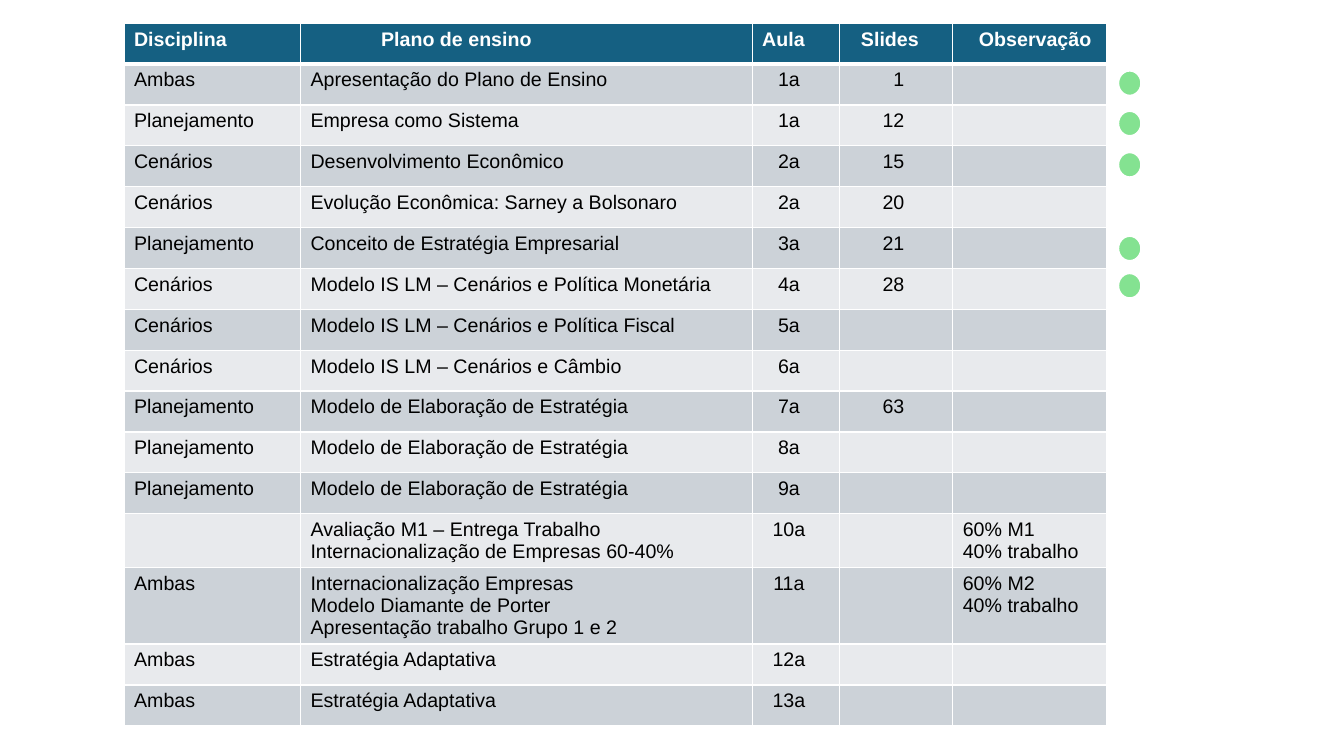
import lxml.etree
import pptx
import pptx.dml.color
import pptx.enum.shapes
import pptx.enum.text
import pptx.oxml.ns
import pptx.util

Inches = pptx.util.Inches
Align = pptx.enum.text.PP_ALIGN

COLORS = {
    "header": "156082",
    "dark_band": "CCD2D8",
    "light_band": "E8EAED",
    "white": "FFFFFF",
    "text": "000000",
    "done": "84E291",
}

HEADERS = ["Disciplina", "Plano de ensino", "Aula", "Slides", "Observação"]
LESSONS = [
    ("Ambas", "Apresentação do Plano de Ensino", "1a", "1", ""),
    ("Planejamento", "Empresa como Sistema", "1a", "12", ""),
    ("Cenários", "Desenvolvimento Econômico", "2a", "15", ""),
    ("Cenários", "Evolução Econômica: Sarney a Bolsonaro", "2a", "20", ""),
    ("Planejamento", "Conceito de Estratégia Empresarial", "3a", "21", ""),
    ("Cenários", "Modelo IS LM – Cenários e Política Monetária", "4a", "28", ""),
    ("Cenários", "Modelo IS LM – Cenários e Política Fiscal", "5a", "", ""),
    ("Cenários", "Modelo IS LM – Cenários e Câmbio", "6a", "", ""),
    ("Planejamento", "Modelo de Elaboração de Estratégia", "7a", "63", ""),
    ("Planejamento", "Modelo de Elaboração de Estratégia", "8a", "", ""),
    ("Planejamento", "Modelo de Elaboração de Estratégia", "9a", "", ""),
    ("", "Avaliação M1 – Entrega Trabalho Internacionalização de Empresas 60-40%",
     "10a", "", "60% M1\n40% trabalho"),
    ("Ambas", "Internacionalização Empresas\nModelo Diamante de Porter\n"
     "Apresentação trabalho Grupo 1 e 2", "11a", "", "60% M2\n40% trabalho"),
    ("Ambas", "Estratégia Adaptativa", "12a", "", ""),
    ("Ambas", "Estratégia Adaptativa", "13a", "", ""),
]
COLUMN_WIDTHS = [1.75, 4.48, 0.87, 1.12, 1.53]
HEADER_LEFT_MARGINS = [0.1, 0.8, 0.1, 0.21, 0.26]
BODY_RIGHT_MARGINS = [0.1, 0.1, 0.24, 0.48, 0.1]
BODY_ALIGNMENTS = [Align.LEFT, Align.LEFT, Align.CENTER, Align.RIGHT, Align.LEFT]
DONE_DOT_TOPS = [0.7, 1.1, 1.51, 2.34, 2.71]


class SlideBuilder:
    font_name = "Arial"
    font_size = 14

    def __init__(self, slide):
        self.slide = slide

    def color(self, name):
        return pptx.dml.color.RGBColor.from_string(COLORS[name])

    def borders(self, cell, top=1, bottom=1):
        properties = cell._tc.get_or_add_tcPr()
        widths = {"lnL": 1, "lnR": 1, "lnT": top, "lnB": bottom}
        for position, (tag, width) in enumerate(widths.items()):
            line = lxml.etree.Element(
                pptx.oxml.ns.qn(f"a:{tag}"), w=str(pptx.util.Pt(width)))
            fill = lxml.etree.SubElement(line, pptx.oxml.ns.qn("a:solidFill"))
            lxml.etree.SubElement(
                fill, pptx.oxml.ns.qn("a:srgbClr"), val=COLORS["white"])
            properties.insert(position, line)

    def cell(self, cell, text, fill, color, bold, alignment):
        cell.fill.solid()
        cell.fill.fore_color.rgb = self.color(fill)
        cell.text_frame.text = text
        for paragraph in cell.text_frame.paragraphs:
            paragraph.alignment = alignment
            for run in paragraph.runs:
                run.font.name = self.font_name
                run.font.size = pptx.util.Pt(self.font_size)
                run.font.bold = bold
                run.font.color.rgb = self.color(color)

    def table(self, left, top, height):
        table = self.slide.shapes.add_table(
            len(LESSONS) + 1, len(HEADERS), Inches(left), Inches(top),
            Inches(sum(COLUMN_WIDTHS)), Inches(height)).table
        for column, width in enumerate(COLUMN_WIDTHS):
            table.columns[column].width = Inches(width)
            header = table.cell(0, column)
            self.cell(header, HEADERS[column], "header", "white", True, Align.LEFT)
            header.margin_left = Inches(HEADER_LEFT_MARGINS[column])
            header.margin_right = Inches(0.05)
            self.borders(header, bottom=3)
            for row, lesson in enumerate(LESSONS, start=1):
                body = table.cell(row, column)
                band = "dark_band" if row % 2 else "light_band"
                self.cell(body, lesson[column], band, "text", False,
                          BODY_ALIGNMENTS[column])
                body.margin_right = Inches(BODY_RIGHT_MARGINS[column])
                self.borders(body, top=3 if row == 1 else 1)

    def dot(self, left, top, width, height):
        shape = self.slide.shapes.add_shape(
            pptx.enum.shapes.MSO_SHAPE.OVAL,
            Inches(left), Inches(top), Inches(width), Inches(height))
        shape.shadow.inherit = False
        shape.fill.solid()
        shape.fill.fore_color.rgb = self.color("done")
        shape.line.color.rgb = self.color("white")
        shape.line.width = pptx.util.Pt(1.5)


def main():
    presentation = pptx.Presentation()
    presentation.slide_width = Inches(13.33)
    presentation.slide_height = Inches(7.5)
    slide = presentation.slides.add_slide(presentation.slide_layouts[6])
    builder = SlideBuilder(slide)
    builder.table(left=1.23, top=0.23, height=6.49)
    for top in DONE_DOT_TOPS:
        builder.dot(11.09, top, 0.23, 0.25)
    presentation.save("out.pptx")


if __name__ == "__main__":
    main()
